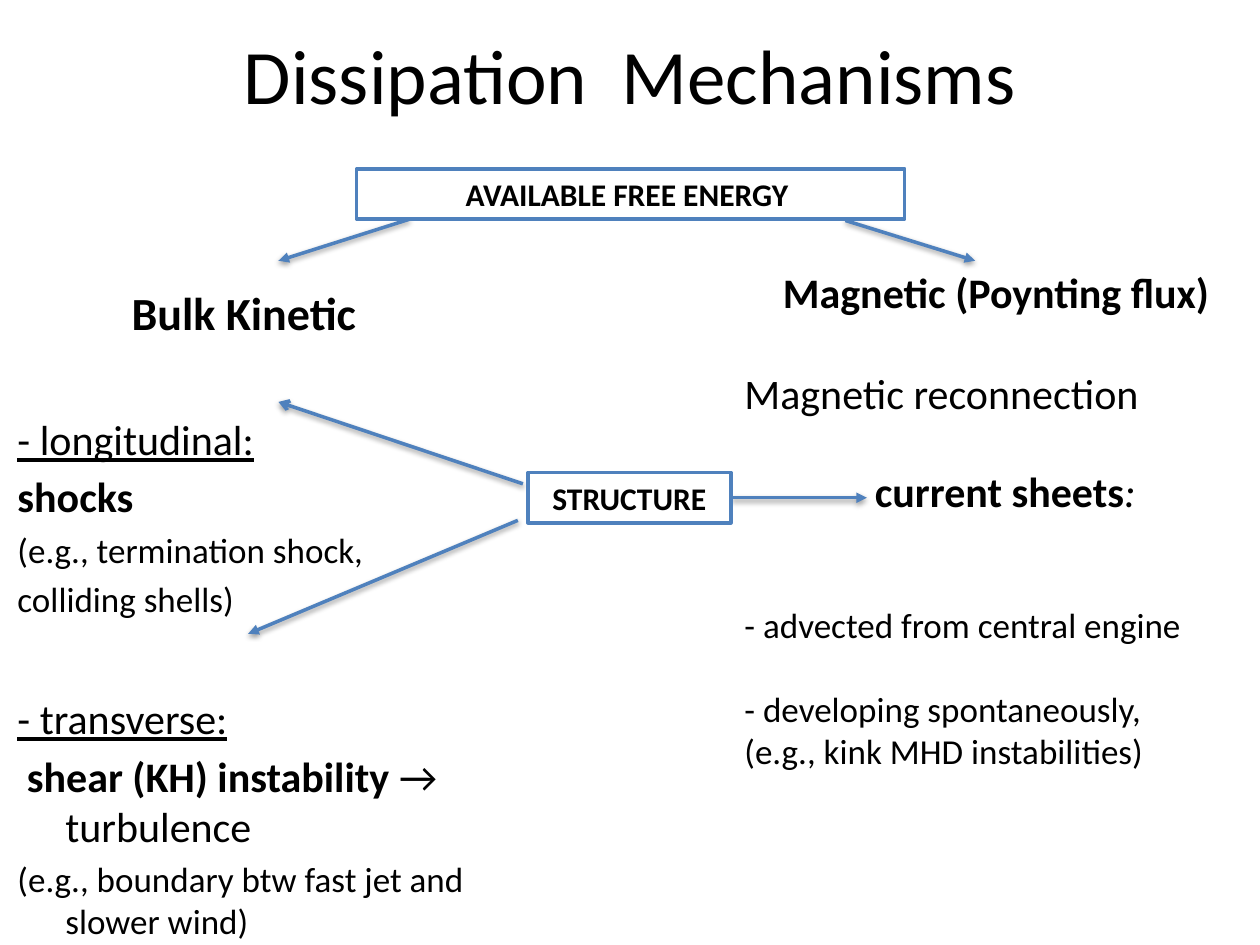
"""Build the Dissipation Mechanisms slide."""
import pptx
import pptx.util
import pptx.dml.color
import pptx.enum.shapes
import pptx.enum.text
import pptx.oxml
import pptx.oxml.ns

Inches, Pt = pptx.util.Inches, pptx.util.Pt
RGBColor = pptx.dml.color.RGBColor
BLACK = RGBColor(0x00, 0x00, 0x00)
WHITE = RGBColor(0xFF, 0xFF, 0xFF)
BLUE = RGBColor(0x4F, 0x81, 0xBD)
LEFT, CENTER = pptx.enum.text.PP_ALIGN.LEFT, pptx.enum.text.PP_ALIGN.CENTER
TOP, MIDDLE = pptx.enum.text.MSO_ANCHOR.TOP, pptx.enum.text.MSO_ANCHOR.MIDDLE
FONT = "Calibri"

TITLE = [dict(runs=[("Dissipation\tMechanisms", "")], size=44, align=CENTER)]
KINETIC = [
    dict(runs=[("Bulk Kinetic", "b")], size=26.3, align=CENTER),
    dict(runs=[("- longitudinal:\t", "u")], size=24, before=42, tab=2.25),
    dict(runs=[("shocks", "b")], size=24, before=4),
    dict(runs=[("(e.g., termination shock,", "")], size=20, before=4),
    dict(runs=[("colliding shells)", "")], size=20, before=4),
    dict(runs=[("- transverse:\t", "u")], size=24, before=42, tab=1.97),
    dict(runs=[(" ", ""), ("shear (KH) instability ", "b"), ("→ turbulence", "")],
         size=24, before=4),
    dict(runs=[("(e.g., boundary btw fast jet and slower wind)", "")], size=20, before=4),
]
MAGNETIC = [
    dict(runs=[("Magnetic (Poynting flux)", "b")], size=24, align=CENTER),
    dict(runs=[("Magnetic reconnection", "")], size=24, before=28.5),
    dict(runs=[("current sheets", "b"), (": ", "i")], size=24, before=27.5,
         align=CENTER, margin=0.22),
    dict(runs=[("- advected from central engine", "")], size=20, before=50),
    dict(runs=[("- developing spontaneously,", "")], size=20, before=24),
    dict(runs=[("(e.g., kink MHD instabilities)", "")], size=20),
]
TEXTS = [
    (TITLE, (0.5, 0.1, 9, 0.97), MIDDLE, 0),
    (KINETIC, (0.04, 2.21, 3.79, 4.95), TOP, 0.38),
    (MAGNETIC, (5.81, 2.07, 4.19, 5.4), TOP, 0),
]
ARROWS = [
    ((3.25, 1.74), (2.21, 2.07), "triangle"),
    ((4.15, 3.84), (2.21, 3.19), "arrow"),
    ((4.11, 4.13), (1.97, 5.03), "triangle"),
    ((6.71, 1.75), (7.74, 2.07), "triangle"),
    ((5.81, 3.95), (6.88, 3.95), "triangle"),
]
BOXES = [
    ("AVAILABLE FREE ENERGY ", (2.83, 1.34, 4.35, 0.4)),
    ("STRUCTURE", (4.19, 3.75, 1.61, 0.4)),
]
SHADOW = (
    '<a:effectLst %s><a:outerShdw blurRad="40000" dist="20000" dir="5400000" '
    'rotWithShape="0"><a:srgbClr val="000000"><a:alpha val="38000"/></a:srgbClr>'
    '</a:outerShdw></a:effectLst>' % pptx.oxml.ns.nsdecls("a"))


def add_xml(parent, xml):
    parent.append(pptx.oxml.parse_xml(xml))


def write_paragraph(para, runs, size, before=0, align=LEFT, margin=0, hanging=0, tab=None):
    para.alignment = align
    para.space_before = Pt(before)
    para.font.name, para.font.size = FONT, Pt(size)
    para.font.color.rgb = BLACK
    properties = para._p.get_or_add_pPr()
    properties.set("marL", str(Inches(margin + hanging)))
    properties.set("indent", str(-Inches(hanging)))
    if tab:
        tabs = pptx.oxml.parse_xml(
            '<a:tabLst %s><a:tab pos="%d" algn="l"/></a:tabLst>'
            % (pptx.oxml.ns.nsdecls("a"), Inches(tab)))
        properties.find(pptx.oxml.ns.qn("a:defRPr")).addprevious(tabs)
    for text, style in runs:
        span = para.add_run()
        span.text = text
        span.font.name, span.font.size = FONT, Pt(size)
        span.font.color.rgb = BLACK
        span.font.bold = "b" in style
        span.font.italic = "i" in style
        span.font.underline = "u" in style


def add_text(page, paragraphs, place, anchor, hanging):
    frame = page.shapes.add_textbox(*map(Inches, place)).text_frame
    frame.word_wrap = True
    frame.vertical_anchor = anchor
    for index, content in enumerate(paragraphs):
        para = frame.add_paragraph() if index else frame.paragraphs[0]
        write_paragraph(para, hanging=hanging, **content)


def add_arrow(page, start, end, head):
    arrow = page.shapes.add_connector(
        pptx.enum.shapes.MSO_CONNECTOR.STRAIGHT, *map(Inches, start + end))
    arrow.line.color.rgb = BLUE
    arrow.line.width = Pt(2)
    add_xml(arrow.line._get_or_add_ln(),
            '<a:tailEnd %s type="%s"/>' % (pptx.oxml.ns.nsdecls("a"), head))
    add_xml(arrow._element.spPr, SHADOW)


def add_box(page, text, place):
    box = page.shapes.add_shape(
        pptx.enum.shapes.MSO_SHAPE.RECTANGLE, *map(Inches, place))
    box.shadow.inherit = False
    box.fill.solid()
    box.fill.fore_color.rgb = WHITE
    box.line.color.rgb = BLUE
    box.line.width = Pt(2)
    box.text_frame.word_wrap = True
    write_paragraph(box.text_frame.paragraphs[0], [(text, "b")], 18, align=CENTER)


def main():
    deck = pptx.Presentation()
    deck.slide_width, deck.slide_height = Inches(10), Inches(7.5)
    page = deck.slides.add_slide(deck.slide_layouts[6])
    for text in TEXTS:
        add_text(page, *text)
    for arrow in ARROWS:
        add_arrow(page, *arrow)
    for box in BOXES:
        add_box(page, *box)
    deck.save("out.pptx")


if __name__ == "__main__":
    main()
